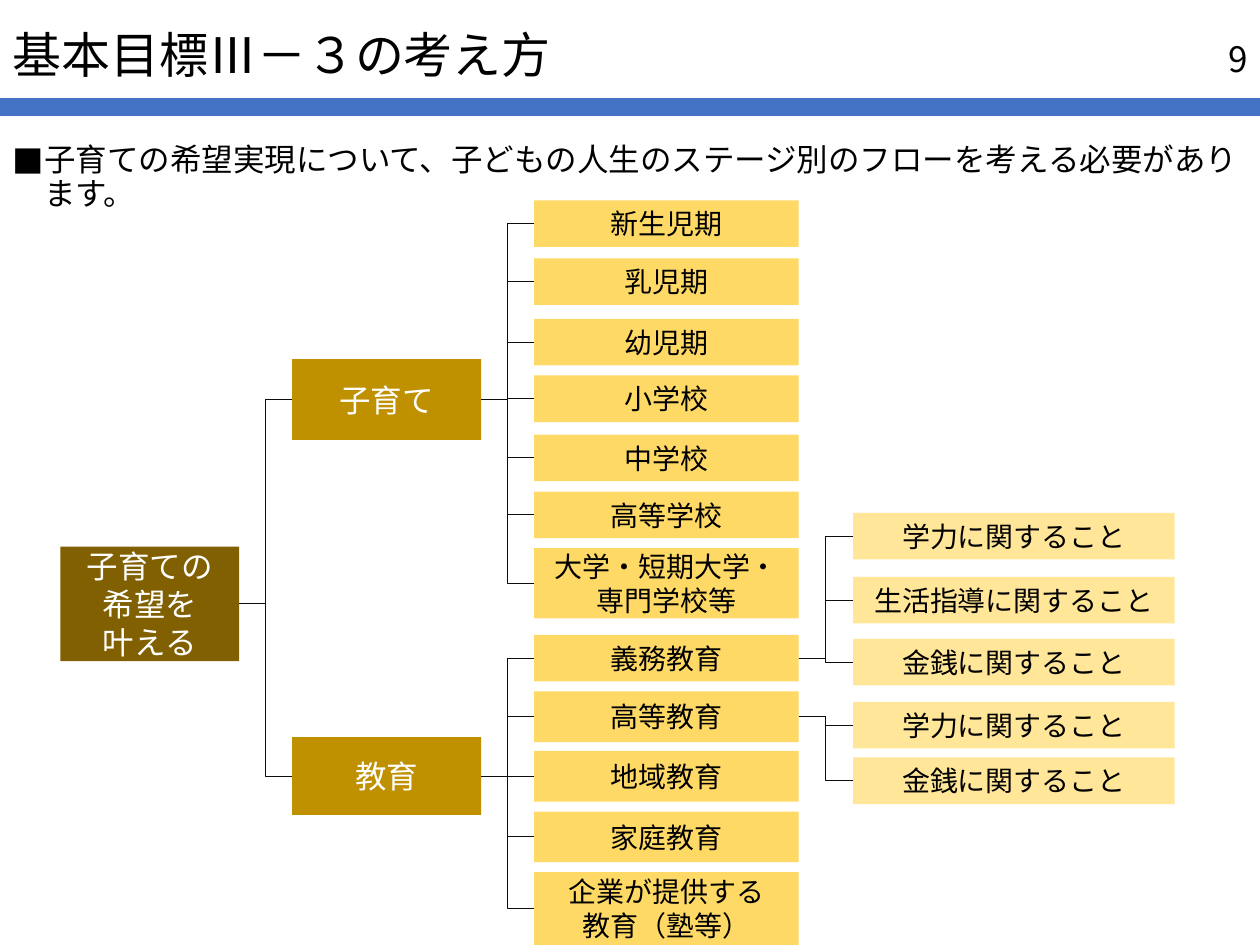
from lxml import etree
from pptx import Presentation
from pptx.dml.color import RGBColor
from pptx.enum import shapes, text
from pptx.oxml import ns
from pptx.util import Cm, Pt

FONT = "Noto Sans CJK JP"
COLORS = {
    "bar": "4472C4", "line": "0D0D0D", "black": "000000", "white": "FFFFFF",
    "goal": "806000", "field": "BF9000", "stage": "FFD966", "topic": "FFE699",
}
# One entry per tree level: left and width in cm, fill, text colour, size
LEVELS = [
    (0, 3.6, "goal", "white", 18),
    (4.67, 3.81, "field", "white", 18),
    (9.55, 5.33, "stage", "black", 16),
    (15.98, 6.48, "topic", "black", 16),
]
LEFT_SITE, RIGHT_SITE = 1, 3

# Each node: label, top and height in cm within the tree, children
ACADEMIC, MONEY = "学力に関すること", "金銭に関すること"
COMPULSORY_TOPICS = [
    (ACADEMIC, 6.3, 0.94, []),
    ("生活指導に関すること", 7.59, 0.94, []),
    (MONEY, 8.84, 0.94, []),
]
HIGHER_TOPICS = [(ACADEMIC, 10.11, 0.94, []), (MONEY, 11.23, 0.94, [])]
CHILD_STAGES = [
    ("新生児期", 0, 0.94, []),
    ("乳児期", 1.17, 0.94, []),
    ("幼児期", 2.39, 0.94, []),
    ("小学校", 3.53, 0.94, []),
    ("中学校", 4.72, 0.94, []),
    ("高等学校", 5.87, 0.94, []),
    ("大学・短期大学・専門学校等", 7.01, 1.42, []),
]
EDUCATION_KINDS = [
    ("義務教育", 8.76, 0.94, COMPULSORY_TOPICS),
    ("高等教育", 9.9, 1.02, HIGHER_TOPICS),
    ("地域教育", 11.1, 1.02, []),
    ("家庭教育", 12.32, 1.02, []),
    ("企業が提供する\n教育（塾等）", 13.54, 1.47, []),
]
GOAL_TREE = ("子育ての\n希望を\n叶える", 6.98, 2.31, [
    ("子育て", 3.2, 1.63, CHILD_STAGES),
    ("教育", 10.82, 1.57, EDUCATION_KINDS),
])


def rgb(name):
    return RGBColor.from_string(COLORS[name])


def write(shape, words, size, color, align, anchor=text.MSO_ANCHOR.MIDDLE):
    frame = shape.text_frame
    frame.text = words
    frame.word_wrap = True
    frame.auto_size = text.MSO_AUTO_SIZE.NONE
    frame.vertical_anchor = anchor
    for paragraph in frame.paragraphs:
        paragraph.alignment = align
        for run in paragraph.runs:
            run.font.size = Pt(size)
            run.font.name = FONT
            run.font.color.rgb = rgb(color)
            east_asian = etree.SubElement(run.font._element, ns.qn("a:ea"))
            east_asian.set("typeface", FONT)


def add_block(slide, left, top, width, height, fill):
    block = slide.shapes.add_shape(
        shapes.MSO_SHAPE.RECTANGLE, Cm(left), Cm(top), Cm(width), Cm(height))
    block.shadow.inherit = False
    block.fill.solid()
    block.fill.fore_color.rgb = rgb(fill)
    block.line.fill.background()
    return block


def add_branch(slide, parent, child):
    branch = slide.shapes.add_connector(shapes.MSO_CONNECTOR.ELBOW, 0, 0, 0, 0)
    branch.begin_connect(parent, RIGHT_SITE)
    branch.end_connect(child, LEFT_SITE)
    branch.line.color.rgb = rgb("line")
    branch.line.width = Pt(0.5)
    etree.SubElement(branch._element.spPr, ns.qn("a:effectLst"))


def add_header(slide, left, top, width):
    # Title
    title = slide.shapes.title
    title.left, title.top = Cm(left), Cm(top + 0.79)
    title.width, title.height = Cm(width - 5.72), Cm(0.74)
    write(title, "基本目標Ⅲ－３の考え方", 28, "black", text.PP_ALIGN.LEFT)
    title.text_frame.paragraphs[0].line_spacing = 0.9
    # Page number
    page = slide.shapes.add_textbox(
        Cm(left + width - 5.72), Cm(top + 0.66), Cm(5.72), Cm(1.02))
    write(page, "9", 20, "black", text.PP_ALIGN.RIGHT)
    # Rule below the title
    add_block(slide, left, top + 1.98, width, 0.36, "bar")


def add_lead(slide, left, top, width, height):
    lead = slide.shapes.add_textbox(Cm(left), Cm(top), Cm(width), Cm(height))
    write(lead, "子育ての希望実現について、子どもの人生のステージ別のフローを考える必要があります。",
          18, "black", text.PP_ALIGN.LEFT, text.MSO_ANCHOR.TOP)
    paragraph = lead.text_frame.paragraphs[0]
    paragraph.line_spacing = 0.9
    paragraph.space_before = Pt(10)
    properties = paragraph._p.get_or_add_pPr()
    properties.set("marL", str(Cm(0.64)))
    properties.set("indent", str(-Cm(0.64)))
    etree.SubElement(properties, ns.qn("a:buFont")).set("typeface", FONT)
    etree.SubElement(properties, ns.qn("a:buChar")).set("char", "■")


def add_tree(slide, left, top, node, level=0):
    """Draw a node with everything below it and return the node's block."""
    label, offset, height, children = node
    column, width, fill, color, size = LEVELS[level]
    block = add_block(slide, left + column, top + offset, width, height, fill)
    write(block, label, size, color, text.PP_ALIGN.CENTER)
    for child in children:
        add_branch(slide, block, add_tree(slide, left, top, child, level + 1))
    return block


def main():
    deck = Presentation()
    deck.slide_width, deck.slide_height = Cm(25.4), Cm(19.05)
    slide = deck.slides.add_slide(deck.slide_layouts[5])
    add_header(slide, 0, 0, 25.4)
    add_lead(slide, 0, 2.79, 25.4, 1.98)
    add_tree(slide, 1.22, 4.04, GOAL_TREE)
    deck.save("out.pptx")


if __name__ == "__main__":
    main()
